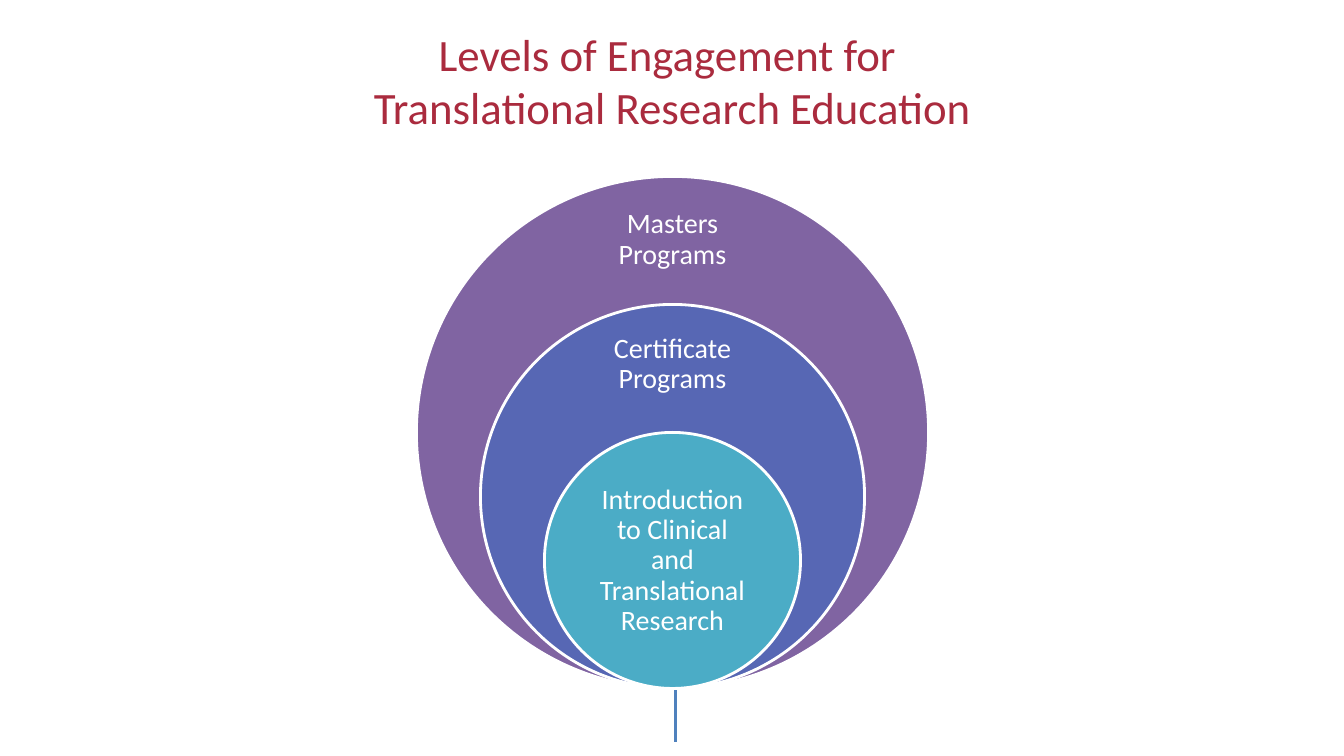
from pptx import Presentation
from pptx.dml.color import RGBColor
from pptx.enum.shapes import MSO_CONNECTOR, MSO_SHAPE
from pptx.enum.text import MSO_ANCHOR, PP_ALIGN
from pptx.oxml.ns import qn
from pptx.util import Inches, Pt
from lxml import etree

OVAL = MSO_SHAPE.OVAL
STRAIGHT = MSO_CONNECTOR.STRAIGHT
MIDDLE = MSO_ANCHOR.MIDDLE
CENTER = PP_ALIGN.CENTER

WHITE = RGBColor(0xFF, 0xFF, 0xFF)
CRIMSON = RGBColor(0xAA, 0x2B, 0x3E)
PURPLE = RGBColor(0x80, 0x64, 0xA2)
INDIGO = RGBColor(0x57, 0x67, 0xB4)
TEAL = RGBColor(0x4B, 0xAC, 0xC6)
BLUE = RGBColor(0x4F, 0x81, 0xBD)

CIRCLE_CENTER = 6.67
CIRCLE_BOTTOM = 6.83
CIRCLE_STEP = 1.27


class SlideBuilder:
    font_name = "Calibri"
    line_width = Pt(2)

    def __init__(self, slide):
        self.slide = slide

    def text(self, box, lines, size, color, inset=(0.1, 0.05), spacing=1.0):
        shape = self.slide.shapes.add_textbox(*map(Inches, box))
        frame = shape.text_frame
        frame.word_wrap = True
        frame.vertical_anchor = MIDDLE
        frame.margin_left = frame.margin_right = Inches(inset[0])
        frame.margin_top = frame.margin_bottom = Inches(inset[1])
        paragraph = frame.paragraphs[0]
        for index, line in enumerate(lines):
            if index:
                paragraph.add_line_break()
            paragraph.add_run().text = line
        paragraph.alignment = CENTER
        paragraph.line_spacing = spacing
        paragraph.font.name = self.font_name
        paragraph.font.size = Pt(size)
        paragraph.font.color.rgb = color

    def circle(self, diameter, color):
        left = CIRCLE_CENTER - diameter / 2
        top = CIRCLE_BOTTOM - diameter
        shape = self.slide.shapes.add_shape(
            OVAL, *map(Inches, (left, top, diameter, diameter)))
        shape.shadow.inherit = False
        shape.fill.solid()
        shape.fill.fore_color.rgb = color
        shape.line.color.rgb = WHITE
        shape.line.width = self.line_width

    def line(self, start, end, color):
        connector = self.slide.shapes.add_connector(
            STRAIGHT, *map(Inches, start + end))
        connector.line.color.rgb = color
        connector.line.width = self.line_width
        properties = connector._element.spPr
        etree.SubElement(properties, qn("a:effectLst"))


def main():
    presentation = Presentation()
    presentation.slide_width = Inches(13.33)
    presentation.slide_height = Inches(7.5)
    slide = presentation.slides.add_slide(presentation.slide_layouts[6])
    builder = SlideBuilder(slide)

    builder.line((6.7, 6.84), (6.7, 7.36), BLUE)
    builder.text((0.67, 0.24, 12, 1.11),
                 ["Levels of Engagement for ", "Translational Research Education"],
                 32, CRIMSON)

    levels = [
        ("Masters Programs", PURPLE, 2, 1.78, 0.76),
        ("Certificate Programs", INDIGO, 3.26, 1.78, 0.71),
        ("Introduction to Clinical and Translational Research", TEAL, 4.93, 1.8, 1.27),
    ]
    for index, (label, color, top, width, height) in enumerate(levels):
        builder.circle(CIRCLE_STEP * (4 - index), color)
        builder.text((CIRCLE_CENTER - width / 2, top, width, height), [label],
                     20, WHITE, inset=(0.16, 0.16), spacing=0.9)

    presentation.save("out.pptx")


if __name__ == "__main__":
    main()
